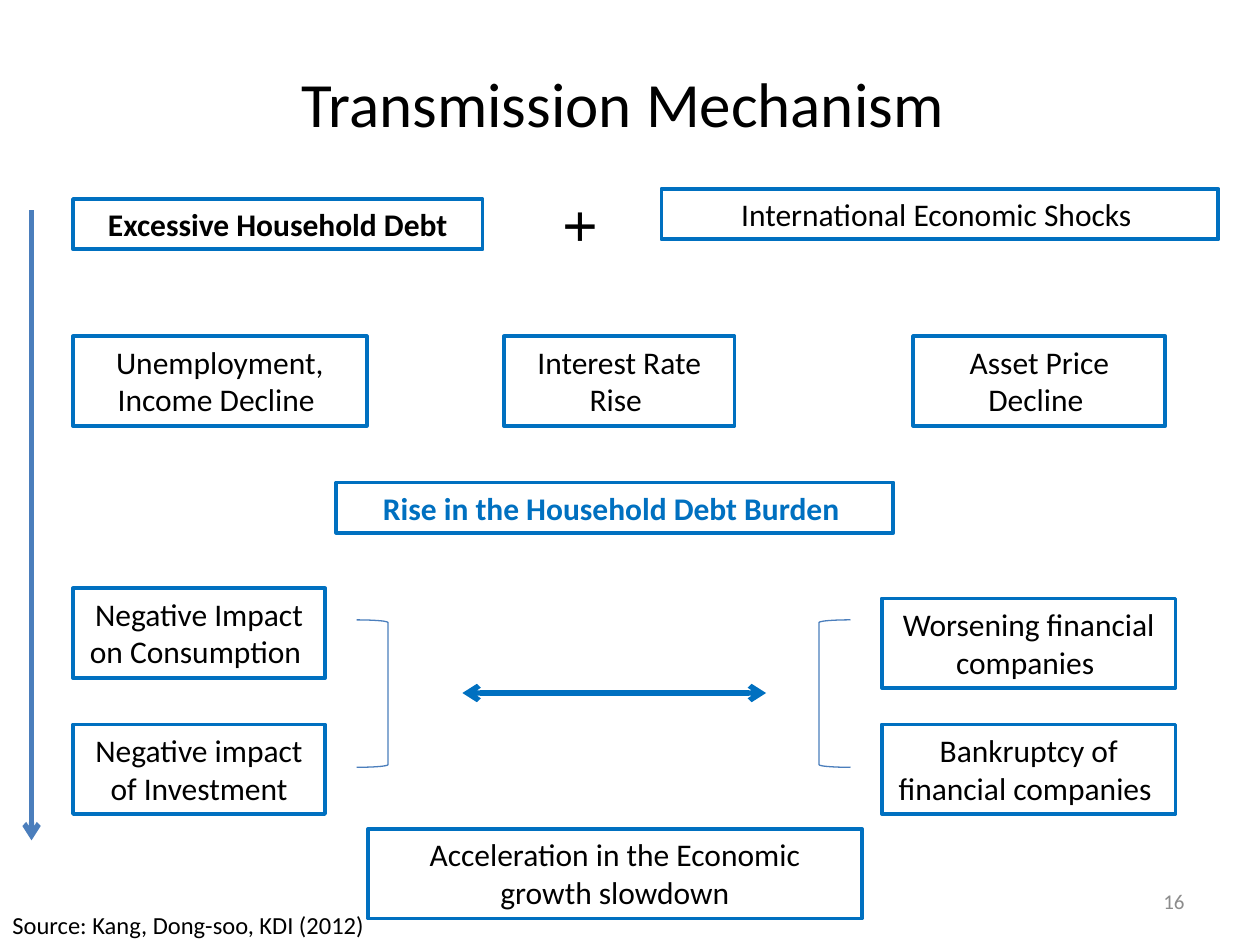
from lxml import etree
from pptx import Presentation
from pptx.dml.color import RGBColor
from pptx.enum.shapes import MSO_CONNECTOR, MSO_SHAPE
from pptx.enum.text import MSO_ANCHOR, MSO_AUTO_SIZE, PP_ALIGN
from pptx.oxml.ns import qn
from pptx.util import Inches, Pt

LEFT, CENTER, RIGHT = PP_ALIGN.LEFT, PP_ALIGN.CENTER, PP_ALIGN.RIGHT
TOP, MIDDLE = MSO_ANCHOR.TOP, MSO_ANCHOR.MIDDLE
FIT = MSO_AUTO_SIZE.SHAPE_TO_FIT_TEXT
COLORS = {"text": "000000", "blue": "0070C0", "steel": "4B7EBC", "gray": "8C8C8C"}


def rgb(name):
    return RGBColor.from_string(COLORS[name])


def write(sp, text, size, color="text", align=CENTER, anchor=TOP, bold=False):
    tf = sp.text_frame
    tf.word_wrap = True
    tf.vertical_anchor = anchor
    p = tf.paragraphs[0]
    p.text = text
    p.alignment = align
    p.font.name = "Calibri"
    p.font.size = Pt(size)
    p.font.bold = bold
    p.font.color.rgb = rgb(color)
    return tf


prs = Presentation()
prs.slide_width, prs.slide_height = Inches(10), Inches(7.5)
s = prs.slides.add_slide(prs.slide_layouts[5])

# Title
title = s.shapes.title
title.left, title.top = Inches(0.5), Inches(0.3)
title.width, title.height = Inches(9), Inches(1.03)
write(title, "Transmission Mechanism ", 36, anchor=MIDDLE)

# Boxes: left, top, width, number of lines, text, colour, bold
ONE_LINE, TWO_LINES = 0.4, 0.71
boxes = [
    (0.58, 1.58, 3.25, ONE_LINE, "Excessive Household Debt", "text", True),
    (5.25, 1.5, 4.42, ONE_LINE, "International Economic Shocks ", "text", False),
    (0.58, 2.67, 2.33, TWO_LINES, "Unemployment, Income Decline ", "text", False),
    (4, 2.67, 1.83, TWO_LINES, "Interest Rate Rise ", "text", False),
    (7.25, 2.67, 2, TWO_LINES, "Asset Price Decline ", "text", False),
    (2.67, 3.83, 4.42, ONE_LINE, "Rise in the Household Debt Burden ", "blue", True),
    (0.58, 4.67, 2, TWO_LINES, "Negative Impact on Consumption ", "text", False),
    (0.58, 5.75, 2, TWO_LINES, "Negative impact of Investment", "text", False),
    (7, 4.75, 2.33, TWO_LINES, "Worsening financial companies ", "text", False),
    (7, 5.75, 2.33, TWO_LINES, "Bankruptcy of financial companies ", "text", False),
    (2.92, 6.58, 3.92, TWO_LINES, "Acceleration in the Economic growth slowdown", "text", False),
]
for x, y, w, h, text, color, bold in boxes:
    sp = s.shapes.add_shape(MSO_SHAPE.RECTANGLE, Inches(x), Inches(y), Inches(w), Inches(h))
    sp.shadow.inherit = False
    sp.fill.background()
    sp.line.color.rgb = rgb("blue")
    sp.line.width = Pt(2.25)
    write(sp, text, 18, color, bold=bold).auto_size = FIT

# Plus sign, set vertically
plus = s.shapes.add_textbox(Inches(4.19), Inches(1.58), Inches(0.81), Inches(1.08))
tf = write(plus, "+", 36, align=LEFT)
tf.auto_size = FIT
tf._txBody.bodyPr.set("vert", "eaVert")

# Brackets around the two-way link
for shape, x in ((MSO_SHAPE.RIGHT_BRACKET, 2.83), (MSO_SHAPE.LEFT_BRACKET, 6.5)):
    sp = s.shapes.add_shape(shape, Inches(x), Inches(4.92), Inches(0.25), Inches(1.17))
    sp.shadow.inherit = False
    sp.fill.background()
    sp.line.color.rgb = rgb("steel")
    sp.line.width = Pt(0.75)

# Arrows: start, end, colour, ends with a head
arrows = [
    (0.25, 1.67, 0.25, 6.67, "steel", ["a:tailEnd"]),
    (3.67, 5.5, 6.08, 5.5, "blue", ["a:headEnd", "a:tailEnd"]),
]
for x1, y1, x2, y2, color, ends in arrows:
    line = s.shapes.add_connector(
        MSO_CONNECTOR.STRAIGHT, Inches(x1), Inches(y1), Inches(x2), Inches(y2))
    line.line.color.rgb = rgb(color)
    line.line.width = Pt(3)
    for end in ends:
        etree.SubElement(line.line._get_or_add_ln(), qn(end), type="arrow")
    etree.SubElement(line._element.spPr, qn("a:effectLst"))

# Source and page number
source = s.shapes.add_textbox(Inches(0), Inches(7.17), Inches(3.75), Inches(0.33))
write(source, "Source: Kang, Dong-soo, KDI (2012)", 14, align=LEFT)
number = s.shapes.add_textbox(Inches(7.17), Inches(6.95), Inches(2.33), Inches(0.4))
write(number, "16", 12, "gray", RIGHT, MIDDLE)

prs.save("out.pptx")
